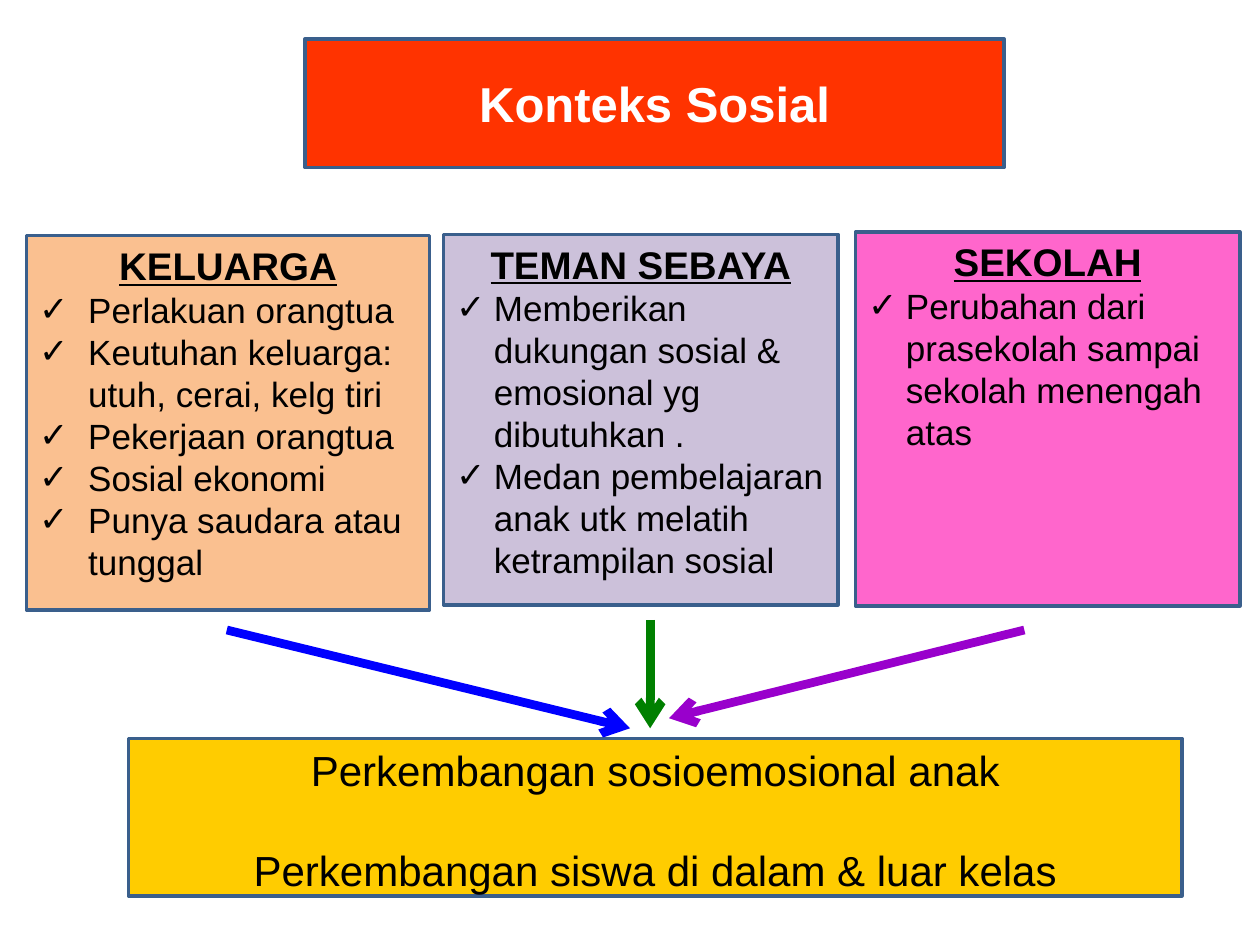
from pptx import Presentation
from pptx.dml.color import RGBColor
from pptx.enum.shapes import MSO_CONNECTOR
from pptx.enum.text import MSO_ANCHOR, MSO_AUTO_SIZE, PP_ALIGN
from pptx.oxml.ns import qn
from pptx.util import Inches, Pt
from lxml import etree

STRAIGHT = MSO_CONNECTOR.STRAIGHT
TOP, MIDDLE = MSO_ANCHOR.TOP, MSO_ANCHOR.MIDDLE
LEFT, CENTER = PP_ALIGN.LEFT, PP_ALIGN.CENTER
NO_FIT = MSO_AUTO_SIZE.NONE

COLORS = {
    "title": "FF3300", "family": "FAC090", "peers": "CCC1DA",
    "school": "FF66CC", "outcome": "FFCC00", "border": "3A5F8C",
    "blue": "0000FF", "green": "008000", "purple": "9900CC",
    "black": "000000", "white": "FFFFFF",
}
HEADING = {"size": Pt(22), "bold": True, "underline": True}
ITEM = {"size": Pt(20), "bold": False, "underline": False}
TITLE = {"size": Pt(28), "bold": True}
OUTCOME = {"size": Pt(24), "bold": False}

prs = Presentation()
prs.slide_width, prs.slide_height = Inches(10), Inches(7.5)
slide = prs.slides.add_slide(prs.slide_layouts.get_by_name("Comparison"))
family, peers, school, outcome = [slide.placeholders[i] for i in (1, 2, 3, 4)]


def style_panel(panel, box, fill, anchor=TOP):
    panel.left, panel.top, panel.width, panel.height = [Inches(n) for n in box]
    panel.fill.solid()
    panel.fill.fore_color.rgb = RGBColor.from_string(COLORS[fill])
    panel.line.color.rgb = RGBColor.from_string(COLORS["border"])
    panel.line.width = Pt(2)
    frame_format = {"word_wrap": True, "auto_size": NO_FIT, "vertical_anchor": anchor}
    for key, value in frame_format.items():
        setattr(panel.text_frame, key, value)


def write(paragraph, text, font, color="black", indent=0, gap=0):
    paragraph.alignment = LEFT if indent else CENTER
    paragraph.space_before = Pt(gap)
    properties = paragraph._p.get_or_add_pPr()
    properties.set("marL", str(Inches(indent)))
    properties.set("indent", str(-Inches(indent)))
    if indent:
        etree.SubElement(properties, qn("a:buFont")).set("typeface", "Arial")
        etree.SubElement(properties, qn("a:buChar")).set("char", "✓")
    else:
        etree.SubElement(properties, qn("a:buNone"))
    run = paragraph.add_run()
    run.text = text
    for key, value in {"name": "Arial", **font}.items():
        setattr(run.font, key, value)
    run.font.color.rgb = RGBColor.from_string(COLORS[color])


title = slide.shapes.title
style_panel(title, (2.42, 0.31, 5.55, 1.02), "title", MIDDLE)
write(title.text_frame.paragraphs[0], "Konteks Sosial", TITLE, "white")

contexts = [
    (family, (0.21, 1.87, 3.2, 2.97), "family", 0.39, "KELUARGA", [
        "Perlakuan orangtua",
        "Keutuhan keluarga: utuh, cerai, kelg tiri",
        "Pekerjaan orangtua",
        "Sosial ekonomi",
        "Punya saudara atau tunggal",
    ]),
    (peers, (3.52, 1.86, 3.13, 2.94), "peers", 0.3, "TEMAN SEBAYA", [
        "Memberikan dukungan sosial & emosional yg dibutuhkan .",
        "Medan pembelajaran anak utk melatih ketrampilan sosial",
    ]),
    (school, (6.79, 1.84, 3.05, 2.97), "school", 0.3, "SEKOLAH", [
        "Perubahan dari prasekolah sampai sekolah menengah atas",
    ]),
]
for context, box, fill, indent, heading, items in contexts:
    style_panel(context, box, fill)
    write(context.text_frame.paragraphs[0], heading, HEADING)
    for item in items:
        write(context.text_frame.add_paragraph(), item, ITEM, indent=indent)

style_panel(outcome, (1.02, 5.86, 8.36, 1.25), "outcome")
write(outcome.text_frame.paragraphs[0], "Perkembangan sosioemosional anak", OUTCOME)
write(outcome.text_frame.add_paragraph(), "Perkembangan siswa di dalam & luar kelas", OUTCOME, gap=28)

influences = [
    ((1.8, 5, 5, 5.78), "blue"),
    ((5.16, 4.92, 5.16, 5.78), "green"),
    ((8.13, 5, 5.31, 5.7), "purple"),
]
for ends, color in influences:
    influence = slide.shapes.add_connector(STRAIGHT, *[Inches(n) for n in ends])
    influence.line.color.rgb = RGBColor.from_string(COLORS[color])
    influence.line.width = Pt(5)
    properties = influence._element.spPr
    etree.SubElement(properties.find(qn("a:ln")), qn("a:tailEnd")).set("type", "arrow")
    etree.SubElement(properties, qn("a:effectLst"))

prs.save("out.pptx")
